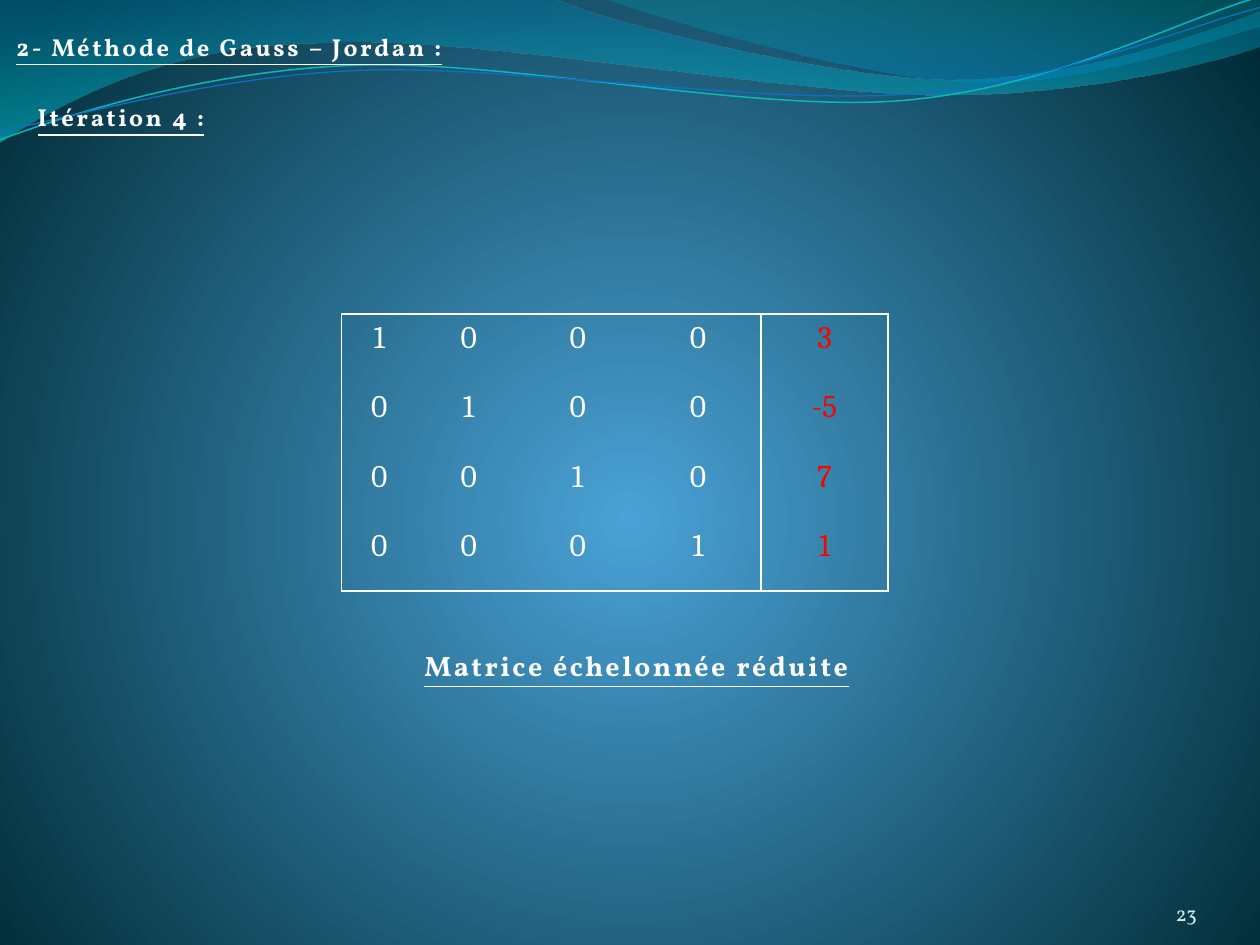
import math

from lxml import etree
from pptx import Presentation
from pptx import util as u
from pptx.dml.color import RGBColor
from pptx.enum import text
from pptx.oxml.ns import qn

COLORS = {
    "white": "FFFFFF", "red": "FF0000", "number": "D1EAED",
    "glow": "4AA2D6", "night": "002B36",
    "blue": "0074A0", "cyan": "00C4CD", "azure": "008ABF", "teal": "00A0A8",
    "teal line": "09B7BF", "blue line": "0F6FC6",
}

deck = Presentation()
deck.slide_width, deck.slide_height = u.Inches(10), u.Inches(7.5)
unit = deck.slide_width / 10  # the slide is a grid of 10 columns by 7.5 rows
page = deck.slides.add_slide(deck.slide_layouts[5])


def set_gradient(fill, owner, stops, angle=None):
    """Stops are (position %, colour, opacity %); no angle means a radial fill."""
    fill.gradient()
    grad = next(owner.iter(qn("a:gradFill")))
    for child in list(grad):
        grad.remove(child)
    stop_list = etree.SubElement(grad, qn("a:gsLst"))
    for position, color, opacity in stops:
        stop = etree.SubElement(stop_list, qn("a:gs"), pos=str(position * 1000))
        rgb = etree.SubElement(stop, qn("a:srgbClr"), val=COLORS[color])
        if opacity < 100:
            etree.SubElement(rgb, qn("a:alpha"), val=str(opacity * 1000))
    if angle is None:
        circle = etree.SubElement(grad, qn("a:path"), attrib={"path": "circle"})
        etree.SubElement(circle, qn("a:fillToRect"),
                         l="50000", t="55000", r="50000", b="45000")
    else:
        etree.SubElement(grad, qn("a:lin"), ang=str(angle * 60000), scaled="0")


def write(frame, words, size, color, font="Vollkorn", align="LEFT", heading=False):
    para = frame.paragraphs[0]
    para.alignment = getattr(text.PP_ALIGN, align)
    span = para.add_run()
    span.text = words
    span.font.size, span.font.name = u.Pt(size), font
    span.font.color.rgb = RGBColor.from_string(COLORS[color])
    if heading:
        span.font.bold = span.font.underline = True
        span._r.get_or_add_rPr().set("spc", "150")


# Background
set_gradient(page.background.fill, page.element,
             [(0, "glow", 100), (100, "night", 100)])

# Waves: two numbers make a straight line, six a Bezier curve
bands = [
    ([(0, 0), (4.4, -0.01), (4.76, 0.17, 6.64, 0.63, 7.58, 0.63),
      (8.53, 0.63, 9.58, 0.26, 10, 0.09), (10.01, 0.36),
      (9.83, 0.44, 8.7, 0.76, 7.46, 0.75), (6.22, 0.75, 3.82, 0.28, 2.57, 0.34),
      (1.29, 0.35, 0.46, 0.83, -0.01, 1.13), (0, 0)],
     [(0, "blue", 45), (100, "cyan", 55)], 90, None),
    ([(4.79, -0.01), (5.09, 0.11, 6.82, 0.62, 7.69, 0.65),
      (8.56, 0.69, 9.61, 0.32, 10, 0.21), (10, 0), (4.79, -0.01)],
     [(20, "azure", 45), (100, "teal", 30)], 270, None),
]
strands = [
    ([(0, 1.11), (0.48, 0.93, 1.58, 0.57, 2.77, 0.52),
      (3.95, 0.46, 5.93, 0.89, 7.13, 0.8), (8.33, 0.71, 9.38, 0.15, 9.98, -0.02)],
     "teal line", 0.85, (4.99, 0.57)),
    ([(0, 1.04), (0.47, 0.96, 1.64, 0.61, 2.83, 0.56),
      (4.03, 0.51, 5.97, 0.83, 7.17, 0.75), (8.36, 0.67, 9.41, 0.21, 10, 0.06)],
     "blue line", 0.75, (5, 0.59)),
]
TILT = 2.7  # degrees the strands lean counter-clockwise
cos, sin = math.cos(math.radians(TILT)), math.sin(math.radians(TILT))
for outline, paint, setting, pivot in bands + strands:
    points = [part[i:i + 2] for part in outline for i in range(0, len(part), 2)]
    if pivot:  # level the strand, as its shape is turned afterwards
        px, py = pivot
        points = [(px + (x - px) * cos - (y - py) * sin,
                   py + (x - px) * sin + (y - py) * cos) for x, y in points]
    points = [(x * unit, y * unit) for x, y in points]
    builder = page.shapes.build_freeform(*points[0])
    builder.add_line_segments(points[1:], close=not pivot)
    wave = builder.convert_to_shape()
    wave.shadow.inherit = False

    # Join each three segments of a curve into one Bezier segment
    segments = iter(list(wave.element.iter(qn("a:lnTo"))))
    for part in outline[1:]:
        first = next(segments)
        if len(part) == 6:
            curve = etree.Element(qn("a:cubicBezTo"))
            first.addprevious(curve)
            for segment in (first, next(segments), next(segments)):
                curve.append(segment[0])
                segment.getparent().remove(segment)

    if pivot:
        wave.rotation = 360 - TILT
        wave.fill.background()
        wave.line.color.rgb = RGBColor.from_string(COLORS[paint])
        wave.line.width = u.Pt(setting)
    else:
        set_gradient(wave.fill, wave.element, paint, setting)
        wave.line.fill.background()

# Title, brought in front of the waves, and the other headings
title = page.shapes.title
title.element.getparent().append(title.element)
headings = [
    (title, "2- Méthode de Gauss – Jordan :", 14, (0.03, 0.2, 3.68, 0.33)),
    (None, "Itération 4 :", 14, (0.2, 0.76, 2.12, 0.33)),
    (None, "Matrice échelonnée réduite", 16, (3.27, 5.1, 3.72, 0.37)),
]
for box, words, size, place in headings:
    place = [int(length * unit) for length in place]
    box = box or page.shapes.add_textbox(*place)
    box.left, box.top, box.width, box.height = place
    frame = box.text_frame
    frame.word_wrap = True
    frame.auto_size = text.MSO_AUTO_SIZE.SHAPE_TO_FIT_TEXT
    frame.vertical_anchor = text.MSO_ANCHOR.TOP
    write(frame, words, size, "white", heading=True)

# Page number
number = page.shapes.add_textbox(
    *[int(length * unit) for length in (8.67, 6.95, 0.83, 0.4)])
frame = number.text_frame
frame.word_wrap = True
frame.vertical_anchor = text.MSO_ANCHOR.BOTTOM
frame.margin_left = frame.margin_top = frame.margin_right = frame.margin_bottom = 0
write(frame, "23", 12, "number", align="RIGHT")

# Augmented matrix: identity on the left, solution on the right
solution = ["3", "-5", "7", "1"]
widths = [0.6, 0.82, 0.91, 1, 1.01]
count, last = len(solution), len(widths) - 1
holder = page.shapes.add_table(
    count, len(widths),
    *[int(length * unit) for length in (2.71, 2.49, sum(widths), 0.55 * count)])
matrix = holder.table
matrix.first_row = matrix.horz_banding = False
# "No Style, No Grid"
next(holder.element.iter(qn("a:tableStyleId"))).text = \
    "{2D5ABB26-0587-4C30-8999-92F81FD0307C}"
for column, width in zip(matrix.columns, widths):
    column.width = int(width * unit)
for r, value in enumerate(solution):
    matrix.rows[r].height = int(0.55 * unit)
    for c in range(len(widths)):
        cell = matrix.cell(r, c)
        words = value if c == last else str(int(r == c))
        write(cell.text_frame, words, 18, "red" if c == last else "white",
              font="Cambria", align="CENTER")
        edges = {"a:lnL": c in (0, last), "a:lnR": c >= last - 1,
                 "a:lnT": r == 0, "a:lnB": r == count - 1}
        properties = cell._tc.get_or_add_tcPr()
        for tag in (tag for tag, drawn in edges.items() if drawn):
            edge = etree.SubElement(properties, qn(tag), w=str(u.Pt(0.96)))
            paint = etree.SubElement(edge, qn("a:solidFill"))
            etree.SubElement(paint, qn("a:srgbClr"), val=COLORS["white"])
        cell.fill.background()

deck.save("out.pptx")
